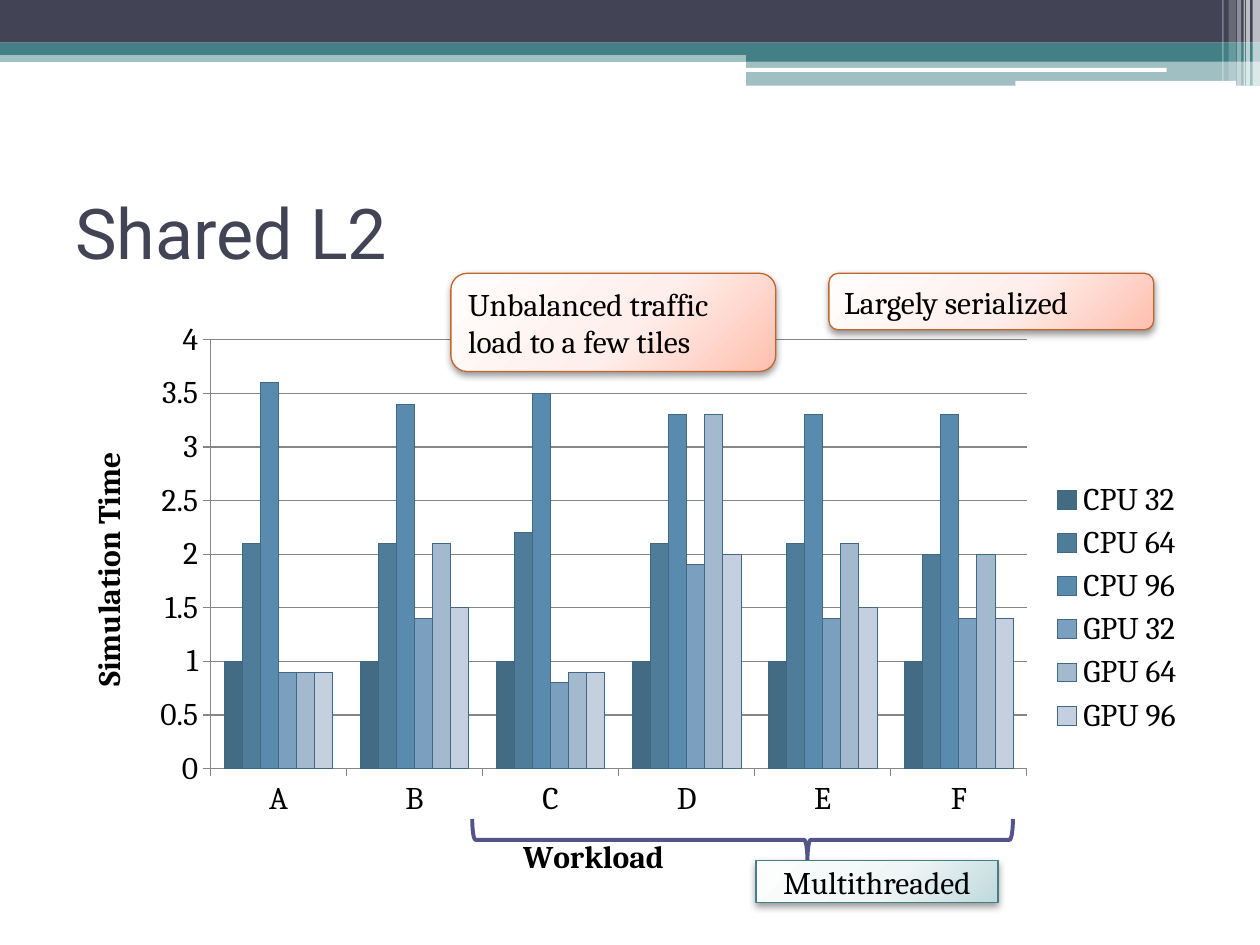
from lxml import etree
from pptx import Presentation
from pptx.chart.data import CategoryChartData
from pptx.dml.color import RGBColor
from pptx.enum import chart as charts, shapes, text
from pptx.oxml import parse_xml
from pptx.oxml.ns import nsdecls, qn
from pptx.util import Cm, Pt

WHITE = RGBColor(0xFF, 0xFF, 0xFF)
BLACK = RGBColor(0, 0, 0)
SLATE = RGBColor(0x42, 0x44, 0x56)
TEAL = RGBColor(0x43, 0x80, 0x86)
INDIGO = RGBColor(0x53, 0x54, 0x8A)
ORANGE = RGBColor(0xC4, 0x65, 0x2D)
GRID = RGBColor(0x86, 0x86, 0x86)
BAR_EDGE = RGBColor(0x41, 0x69, 0x86)
PEACH = [RGBColor(0xFF, 0xFE, 0xFD), RGBColor(0xFF, 0xEF, 0xEC), RGBColor(0xFF, 0xBF, 0xAE)]
MINT = [RGBColor(0xFE, 0xFE, 0xFE), RGBColor(0xF0, 0xF6, 0xF6), RGBColor(0xBF, 0xD9, 0xDD)]

WORKLOADS = "ABCDEF"
SERIES = [
    ("CPU 32", (1, 1, 1, 1, 1, 1), RGBColor(0x44, 0x6B, 0x84)),
    ("CPU 64", (2.1, 2.1, 2.2, 2.1, 2.1, 2), RGBColor(0x4E, 0x7C, 0x99)),
    ("CPU 96", (3.6, 3.4, 3.5, 3.3, 3.3, 3.3), RGBColor(0x58, 0x8B, 0xAD)),
    ("GPU 32", (0.9, 1.4, 0.8, 1.9, 1.4, 1.4), RGBColor(0x7B, 0xA0, 0xBF)),
    ("GPU 64", (0.9, 2.1, 0.9, 3.3, 2.1, 2), RGBColor(0xA3, 0xB9, 0xCE)),
    ("GPU 96", (0.9, 1.5, 0.9, 2, 1.5, 1.4), RGBColor(0xC4, 0xD0, 0xDF)),
]
RECT = shapes.MSO_SHAPE.RECTANGLE
ROUND = shapes.MSO_SHAPE.ROUNDED_RECTANGLE


def inside(box, dx, dy, width, height):
    return box[0] + dx, box[1] + dy, width, height


def write(frame, words, font="Cambria", size=18, color=BLACK,
          align=text.PP_ALIGN.LEFT, anchor=text.MSO_ANCHOR.MIDDLE):
    frame.word_wrap = True
    frame.vertical_anchor = anchor
    paragraph = frame.paragraphs[0]
    paragraph.alignment = align
    run = paragraph.add_run()
    run.text = words
    run.font.name, run.font.size = font, Pt(size)
    run.font.color.rgb = color


def add_block(slide, kind, box, fill=None, alpha=100, line=None, width=0.75):
    block = slide.shapes.add_shape(kind, *map(Cm, box))
    block.shadow.inherit = False
    if fill is None:
        block.fill.background()
    else:
        block.fill.solid()
        block.fill.fore_color.rgb = fill
        if alpha < 100:
            tint = block.fill._xPr.find(".//" + qn("a:srgbClr"))
            etree.SubElement(tint, qn("a:alpha")).set("val", str(alpha * 1000))
    if line is None:
        block.line.fill.background()
    else:
        block.line.color.rgb = line
        block.line.width = Pt(width)
    return block


def add_note(slide, kind, box, words, glow, edge, **style):
    note = add_block(slide, kind, box, fill=glow[0], line=edge)
    properties = note._element.spPr
    stops = "".join(f'<a:gs pos="{place}"><a:srgbClr val="{color}"/></a:gs>'
                    for place, color in zip((0, 55000, 100000), glow))
    properties.replace(properties.find(qn("a:solidFill")), parse_xml(
        f'<a:gradFill {nsdecls("a")} rotWithShape="1"><a:gsLst>{stops}</a:gsLst>'
        '<a:path path="circle"><a:fillToRect l="-40000" t="-90000" r="140000" b="190000"/>'
        '</a:path></a:gradFill>'))
    properties.find(qn("a:effectLst")).append(parse_xml(
        f'<a:outerShdw {nsdecls("a")} blurRad="{Pt(4.1)}" dist="{Pt(2)}" dir="5400000" '
        'rotWithShape="0"><a:srgbClr val="000000"><a:alpha val="40000"/></a:srgbClr></a:outerShdw>'))
    write(note.text_frame, words, **style)


def add_header(slide, box):
    width = box[2]
    tab = 15.04
    for left, top, height, color, alpha in (
            (0, 1.02, 0.23, TEAL, 50), (0, 0, 0.86, SLATE, 100), (0, 0.86, 0.25, TEAL, 100),
            (tab, 0.99, 0.25, TEAL, 100), (tab, 1.22, 0.51, TEAL, 50)):
        add_block(slide, RECT, inside(box, left, top, width - left, height), color, alpha)
    for rule in ((15.01, 1.37, 8.51, 0.08), (20.47, 1.63, 4.45, 0.1)):
        add_block(slide, ROUND, inside(box, *rule), WHITE)
    for left, thickness, height, alpha in (
            (25.25, 0.15, 1.73, 65), (25.12, 0.08, 1.73, 65), (25.07, 0.03, 1.73, 60),
            (24.94, 0.08, 1.73, 40), (24.77, 0.15, 1.63, 20), (24.64, 0.03, 1.63, 30)):
        add_block(slide, RECT, inside(box, left, 0, thickness, height), WHITE, alpha)


def add_title(slide, box):
    title = slide.shapes.add_textbox(*map(Cm, box))
    write(title.text_frame, "Shared L2", font="Roboto", size=40, color=SLATE)


def style_axis(axis, title):
    axis.has_title = True
    axis.axis_title.text_frame.text = title
    font = axis.axis_title.text_frame.paragraphs[0].runs[0].font
    font.name, font.size, font.bold = "Cambria", Pt(18), True
    font.color.rgb = BLACK
    axis.format.line.color.rgb = GRID
    axis.major_tick_mark = charts.XL_TICK_MARK.OUTSIDE


def add_timing_chart(slide, box):
    data = CategoryChartData()
    data.categories = WORKLOADS
    for name, times, _ in SERIES:
        data.add_series(name, times)
    chart = slide.shapes.add_chart(
        charts.XL_CHART_TYPE.COLUMN_CLUSTERED, *map(Cm, box), data).chart
    chart.font.name, chart.font.size = "Cambria", Pt(18)
    chart.font.color.rgb = BLACK
    chart.has_title = False
    chart.has_legend = True
    chart.legend.position = charts.XL_LEGEND_POSITION.RIGHT
    chart.legend.include_in_layout = False
    style_axis(chart.category_axis, "Workload")
    times_axis = chart.value_axis
    style_axis(times_axis, "Simulation Time")
    times_axis.minimum_scale, times_axis.maximum_scale = 0, 4
    times_axis.major_unit = 0.5
    times_axis.has_major_gridlines = True
    times_axis.major_gridlines.format.line.color.rgb = GRID
    plot = chart.plots[0]
    plot.gap_width, plot.overlap, plot.vary_by_categories = 150, 0, False
    for series, (_, _, color) in zip(plot.series, SERIES):
        series.format.fill.solid()
        series.format.fill.fore_color.rgb = color
        series.format.line.color.rgb = BAR_EDGE
    area = chart._chartSpace.chart.plotArea
    for old in area.findall(qn("c:layout")):
        area.remove(old)
    area.insert(0, parse_xml(
        f'<c:layout {nsdecls("c")}><c:manualLayout><c:layoutTarget val="inner"/>'
        '<c:xMode val="edge"/><c:yMode val="edge"/><c:x val="0.13"/><c:y val="0.05"/>'
        '<c:w val="0.72"/><c:h val="0.72"/></c:manualLayout></c:layout>'))


def add_annotations(slide, box):
    for left, height, words in ((7.82, 1.98, "Unbalanced traffic load to a few tiles"),
                                (15.44, 1.14, "Largely serialized")):
        add_note(slide, ROUND, inside(box, left, -0.74, 6.55, height), words, PEACH, ORANGE)
    brace = add_block(slide, shapes.MSO_SHAPE.LEFT_BRACE, inside(box, 13.28, 5.23, 0.84, 10.9),
                      line=INDIGO, width=2.25)
    brace.rotation = 270
    brace.adjustments[0], brace.adjustments[1] = 0.08, 0.62
    add_note(slide, RECT, inside(box, 13.97, 11.1, 4.88, 0.84), "Multithreaded", MINT, TEAL,
             align=text.PP_ALIGN.CENTER)


def main():
    deck = Presentation()
    deck.slide_width, deck.slide_height = Cm(25.4), Cm(19.05)
    slide = deck.slides.add_slide(deck.slide_layouts[6])
    results = (1.27, 6.25, 22.86, 12.01)
    add_header(slide, (0, 0, 25.4, 1.73))
    add_title(slide, (1.27, 3.18, 22.86, 2.97))
    add_timing_chart(slide, results)
    add_annotations(slide, results)
    deck.save("out.pptx")


if __name__ == "__main__":
    main()
